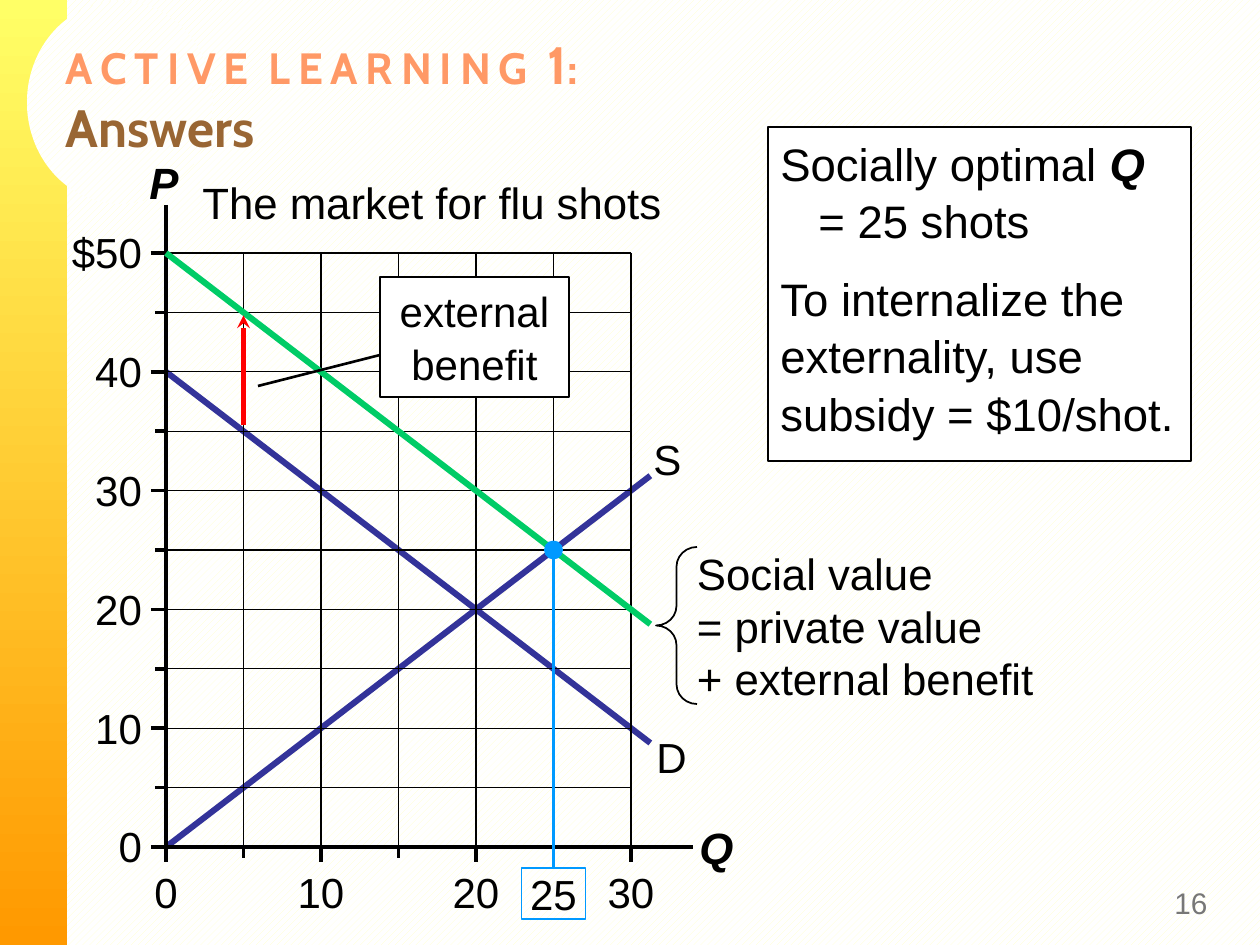
from lxml import etree
from pptx import Presentation
from pptx.dml.color import RGBColor
from pptx.enum.dml import MSO_PATTERN
from pptx.enum.shapes import MSO_CONNECTOR, MSO_SHAPE
from pptx.enum.text import MSO_ANCHOR, PP_ALIGN
from pptx.oxml.ns import qn
from pptx.util import Emu, Pt

STRAIGHT = MSO_CONNECTOR.STRAIGHT
RECT, OVAL, BRACE = MSO_SHAPE.RECTANGLE, MSO_SHAPE.OVAL, MSO_SHAPE.LEFT_BRACE
DIAGONAL = MSO_PATTERN.WIDE_UPWARD_DIAGONAL
LEFT, CENTER, RIGHT = PP_ALIGN.LEFT, PP_ALIGN.CENTER, PP_ALIGN.RIGHT
TOP, MIDDLE = MSO_ANCHOR.TOP, MSO_ANCHOR.MIDDLE

BLACK, WHITE = RGBColor(0, 0, 0), RGBColor(255, 255, 255)
CREAM = RGBColor(0xFF, 0xFF, 0xCC)
YELLOW, ORANGE = RGBColor(0xFF, 0xFF, 0x66), RGBColor(0xFF, 0x99, 0)
SALMON, BROWN = RGBColor(0xFF, 0x99, 0x66), RGBColor(0x99, 0x66, 0x33)
NAVY, GREEN = RGBColor(0x33, 0x33, 0x99), RGBColor(0, 0xCC, 0x66)
RED, BLUE = RGBColor(255, 0, 0), RGBColor(0, 0x99, 0xFF)
GRAY = RGBColor(0x77, 0x77, 0x77)

# Content: curves are in quantity and price units
TITLE_WORDS = ["A C T I V E", "L E A R N I N G"]
PRIVATE_CURVES = [((0, 40), (31.25, 8.75)), ((0, 0), (31.25, 31.25))]
SOCIAL_VALUE = ((0, 50), (31.25, 18.75))
EXTERNAL_BENEFIT = ((5, 35.5), (5, 44.75))
OPTIMUM = (25, 25)
PRICES = range(0, 51, 5)
QUANTITIES = range(0, 31, 5)
BOLD_ITALIC = {"bold": True, "italic": True}
ANSWER = [  # runs, left margin in px, space before in pt
    ([("Socially optimal ", {}), ("Q", BOLD_ITALIC)], 0, 0),
    ([("= 25 shots", {})], 38, 0),
    ([("To internalize the externality, use subsidy = $10/shot.", {})], 0, 11.7),
]
LABELS = [  # text, box, size, font format
    ("D", (644, 725, 57, 63), 24, {}),
    ("S", (641, 427, 54, 63), 24, {}),
    ("The market for flu shots", (190, 170, 485, 66), 25, {}),
    ("P", (137, 150, 54, 66), 25, BOLD_ITALIC),
    ("Q", (687, 815, 59, 66), 25, BOLD_ITALIC),
]

X0, Y0 = 166, 847
X_UNIT, Y_UNIT = 15.5, 11.88
AXIS_TOP, AXIS_RIGHT = 205, 693
MAJOR_TICK, MINOR_TICK = 15, 11
AXIS_WIDTH, GRID_WIDTH = 2.13, 0.75
DIGIT_WIDTH, LABEL_HEIGHT = 23.4, 50

prs = Presentation()


def px(v):
    return Emu(round(v * 914400 / 126))


prs.slide_width, prs.slide_height = px(1260), px(945)
s = prs.slides.add_slide(prs.slide_layouts[6])


def at(q, p):
    """Place of a quantity and price on the slide, in px."""
    return X0 + X_UNIT * q, Y0 - Y_UNIT * p


def hatch(fill):
    fill.patterned()
    fill.pattern = DIAGONAL
    fill.fore_color.rgb, fill.back_color.rgb = CREAM, WHITE


def line(start, end, color=BLACK, width=AXIS_WIDTH, tail=None):
    c = s.shapes.add_connector(STRAIGHT, *map(px, (*start, *end)))
    c.line.color.rgb = color
    c.line.width = Pt(width)
    if tail:
        etree.SubElement(c.get_or_add_ln(), qn("a:tailEnd"), type=tail)
    etree.SubElement(c._element.spPr, qn("a:effectLst"))
    return c


def shape(kind, box, fill=None, outline=None, width=0.75):
    sp = s.shapes.add_shape(kind, *map(px, box))
    sp.shadow.inherit = False
    if fill is None:
        sp.fill.background()
    else:
        sp.fill.solid()
        sp.fill.fore_color.rgb = fill
    if outline is None:
        sp.line.fill.background()
    else:
        sp.line.color.rgb = outline
        sp.line.width = Pt(width)
    return sp


def add_run(p, text, size, color=BLACK, name="Arial", **font):
    r = p.add_run()
    r.text = text
    r.font.color.rgb = color
    for key, value in {"size": Pt(size), "name": name, **font}.items():
        setattr(r.font, key, value)


def frame(sp, inset=True, wrap=True, anchor=TOP):
    """Set up the text frame of a shape; without inset all margins are zero."""
    tf = sp.text_frame
    tf.word_wrap, tf.vertical_anchor = wrap, anchor
    if not inset:
        tf.margin_left = tf.margin_top = tf.margin_right = tf.margin_bottom = 0
    return tf


def label(text, box, size, font={}, align=LEFT, color=BLACK, **setup):
    tf = frame(s.shapes.add_textbox(*map(px, box)), **setup)
    for i, row in enumerate(text.split("\n")):
        p = tf.add_paragraph() if i else tf.paragraphs[0]
        p.alignment = align
        add_run(p, row, size, color, **font)


# Background, side bar and title
hatch(s.background.fill)
bar = shape(RECT, (0, 0, 67, 945), YELLOW)
bar.fill.gradient()
bar.fill.gradient_angle = 270
for stop, color in zip(bar.fill.gradient_stops, (YELLOW, ORANGE)):
    stop.color.rgb = color
hatch(shape(OVAL, (27, 1, 186, 203), WHITE).fill)

p = frame(s.shapes.add_textbox(*map(px, (53, 26, 1134, 145)))).paragraphs[0]
for word in TITLE_WORDS:
    for char in word:
        add_run(p, char, 20 if char == " " else 25, SALMON, "Cabin", bold=True)
    add_run(p, "  ", 25, SALMON, "Cabin", bold=True)
add_run(p, "1", 30, SALMON, "Cabin", bold=True)
add_run(p, ":", 26, SALMON, "Cabin", bold=True)
p.add_line_break()
add_run(p, "Answers", 30, BROWN, "Cabin", bold=True)

# Answer box
tf = frame(shape(RECT, (768, 127, 423, 334), WHITE, BLACK))
for i, (runs, margin, before) in enumerate(ANSWER):
    p = tf.add_paragraph() if i else tf.paragraphs[0]
    p.alignment, p.line_spacing, p.space_before = LEFT, 1.05, Pt(before)
    p._p.get_or_add_pPr().set("marL", str(px(margin)))
    for text, font in runs:
        add_run(p, text, 26, **font)
label("16", (1162, 877, 84, 52), 17, color=GRAY, anchor=MIDDLE)

# Market graph
for start, end in PRIVATE_CURVES:
    line(at(*start), at(*end), NAVY, 3.5)
for price in PRICES:
    x, y = at(0, price)
    major = price % 10 == 0
    if price:
        line((x, y), at(30, price), width=GRID_WIDTH)
    line((x - (MAJOR_TICK if major else MINOR_TICK), y), (x, y))
    if major:
        text = f"${price}" if price == 50 else str(price)
        w = DIGIT_WIDTH * len(text)
        label(text, (142 - w, y - 26, w, LABEL_HEIGHT), 24,
              align=RIGHT, inset=False, wrap=False)
for quantity in QUANTITIES:
    x, y = at(quantity, 0)
    major = quantity % 10 == 0
    if quantity:
        line(at(quantity, 50), (x, y), width=GRID_WIDTH)
    line((x, y + (MAJOR_TICK if major else MINOR_TICK)), (x, y))
    if major:
        w = DIGIT_WIDTH * len(str(quantity))
        label(str(quantity), (x - w / 2, 867, w, LABEL_HEIGHT), 24,
              align=CENTER, inset=False, wrap=False)
line((X0, AXIS_TOP), (X0, Y0))
line((X0, Y0), (AXIS_RIGHT, Y0))
for text, box, size, font in LABELS:
    label(text, box, size, font, wrap=False)

# Social value and external benefit
line(*(at(*end) for end in SOCIAL_VALUE), GREEN, 3.5)
brace = shape(BRACE, (656, 547, 41, 157), outline=BLACK, width=1)
brace.adjustments[0] = 0.48
label("Social value\n= private value\n+ external benefit",
      (697, 547, 354, 157), 25, inset=False)
line(*(at(*end) for end in EXTERNAL_BENEFIT), RED, 2.5, tail="stealth")
line((258, 386), (380, 355), width=1.5)
p = frame(shape(RECT, (380, 277, 189, 120), WHITE, BLACK)).paragraphs[0]
p.alignment, p.line_spacing = CENTER, 1.05
add_run(p, "external benefit", 24)

# Social optimum
x, y = at(*OPTIMUM)
quantity_box = shape(RECT, (x - 32, 868, 64, 51), outline=BLUE)
p = frame(quantity_box, inset=False, wrap=False, anchor=MIDDLE).paragraphs[0]
p.alignment = CENTER
add_run(p, str(OPTIMUM[0]), 24)
line((x, 868), (x, y), BLUE, 1.5).begin_connect(quantity_box, 0)
shape(OVAL, (x - 9.5, y - 9.5, 19, 19), BLUE)

prs.save("out.pptx")
